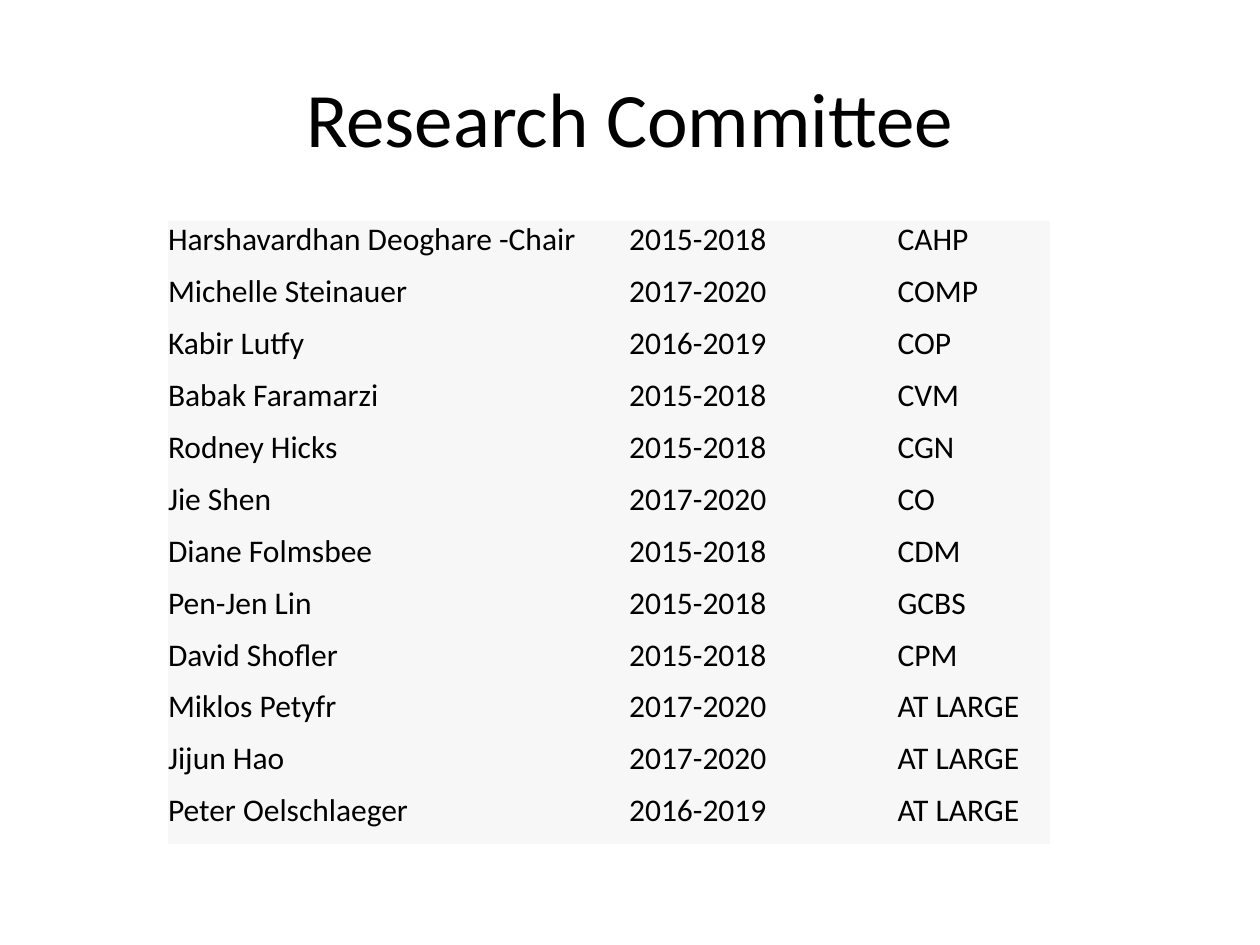
import pptx
import pptx.util
import pptx.dml.color
import pptx.enum.text
import pptx.oxml.ns
import lxml.etree

COLOURS = {"text": "000000", "cell": "F7F7F7", "background": "FFFFFF"}
FONT = "Calibri"
SLIDE_WIDTH, SLIDE_HEIGHT = pptx.util.Inches(10), pptx.util.Inches(7.5)
COLUMN_SHARES = (3.66 / 7, 2.13 / 7, 1.21 / 7)
MEMBERS = [
    ("Harshavardhan Deoghare -Chair", "2015-2018", "CAHP"),
    ("Michelle Steinauer", "2017-2020", "COMP"),
    ("Kabir Lutfy", "2016-2019", "COP"),
    ("Babak Faramarzi", "2015-2018", "CVM"),
    ("Rodney Hicks", "2015-2018", "CGN"),
    ("Jie Shen", "2017-2020", "CO"),
    ("Diane Folmsbee", "2015-2018", "CDM"),
    ("Pen-Jen Lin", "2015-2018", "GCBS"),
    ("David Shofler", "2015-2018", "CPM"),
    ("Miklos Petyfr", "2017-2020", "AT LARGE"),
    ("Jijun Hao", "2017-2020", "AT LARGE"),
    ("Peter Oelschlaeger", "2016-2019", "AT LARGE"),
]


def colour(name):
    """Return the named colour."""
    return pptx.dml.color.RGBColor.from_string(COLOURS[name])


def share_box(left, top, width, height):
    """Turn shares of the slide's size into lengths."""
    return (int(left * SLIDE_WIDTH), int(top * SLIDE_HEIGHT),
            int(width * SLIDE_WIDTH), int(height * SLIDE_HEIGHT))


def style_paragraph(paragraph, size, alignment):
    """Set the font and alignment of a paragraph."""
    paragraph.alignment = alignment
    paragraph.font.name = FONT
    paragraph.font.size = pptx.util.Pt(size)
    paragraph.font.color.rgb = colour("text")


def place_title(heading, box, wording):
    """Move, fill and format the title placeholder."""
    heading.left, heading.top, heading.width, heading.height = box
    heading.text_frame.text = wording
    heading.text_frame.vertical_anchor = pptx.enum.text.MSO_ANCHOR.MIDDLE
    style_paragraph(heading.text_frame.paragraphs[0], 44, pptx.enum.text.PP_ALIGN.CENTER)


def clear_borders(cell):
    """Remove the four borders of a cell."""
    properties = cell._tc.get_or_add_tcPr()
    for position, side in enumerate(("lnL", "lnR", "lnT", "lnB")):
        border = lxml.etree.Element(pptx.oxml.ns.qn("a:" + side), w="0")
        lxml.etree.SubElement(border, pptx.oxml.ns.qn("a:noFill"))
        properties.insert(position, border)


def fill_cell(cell, wording):
    """Write and format one cell of the roster."""
    cell.text = wording
    cell.margin_left = cell.margin_right = cell.margin_top = cell.margin_bottom = 0
    cell.fill.solid()
    cell.fill.fore_color.rgb = colour("cell")
    clear_borders(cell)
    style_paragraph(cell.text_frame.paragraphs[0], 18, pptx.enum.text.PP_ALIGN.LEFT)


def place_roster(slide, box, members):
    """Add the table of members, terms and colleges."""
    roster = slide.shapes.add_table(len(members), len(COLUMN_SHARES), *box).table
    roster.first_row = roster.horz_banding = False
    for column, share in zip(roster.columns, COLUMN_SHARES):
        column.width = int(share * box[2])
    for row, member in zip(roster.rows, members):
        row.height = box[3] // len(members)
        for cell, wording in zip(row.cells, member):
            fill_cell(cell, wording)


def main():
    """Build and save the committee slide."""
    deck = pptx.Presentation()
    deck.slide_width, deck.slide_height = SLIDE_WIDTH, SLIDE_HEIGHT
    slide = deck.slides.add_slide(deck.slide_layouts[5])
    slide.background.fill.solid()
    slide.background.fill.fore_color.rgb = colour("background")
    place_title(slide.shapes.title, share_box(0.05, 0.04, 0.9, 1 / 6), "Research Committee")
    place_roster(slide, share_box(2 / 15, 7 / 30, 0.7, 0.66), MEMBERS)
    deck.save("out.pptx")


if __name__ == "__main__":
    main()
